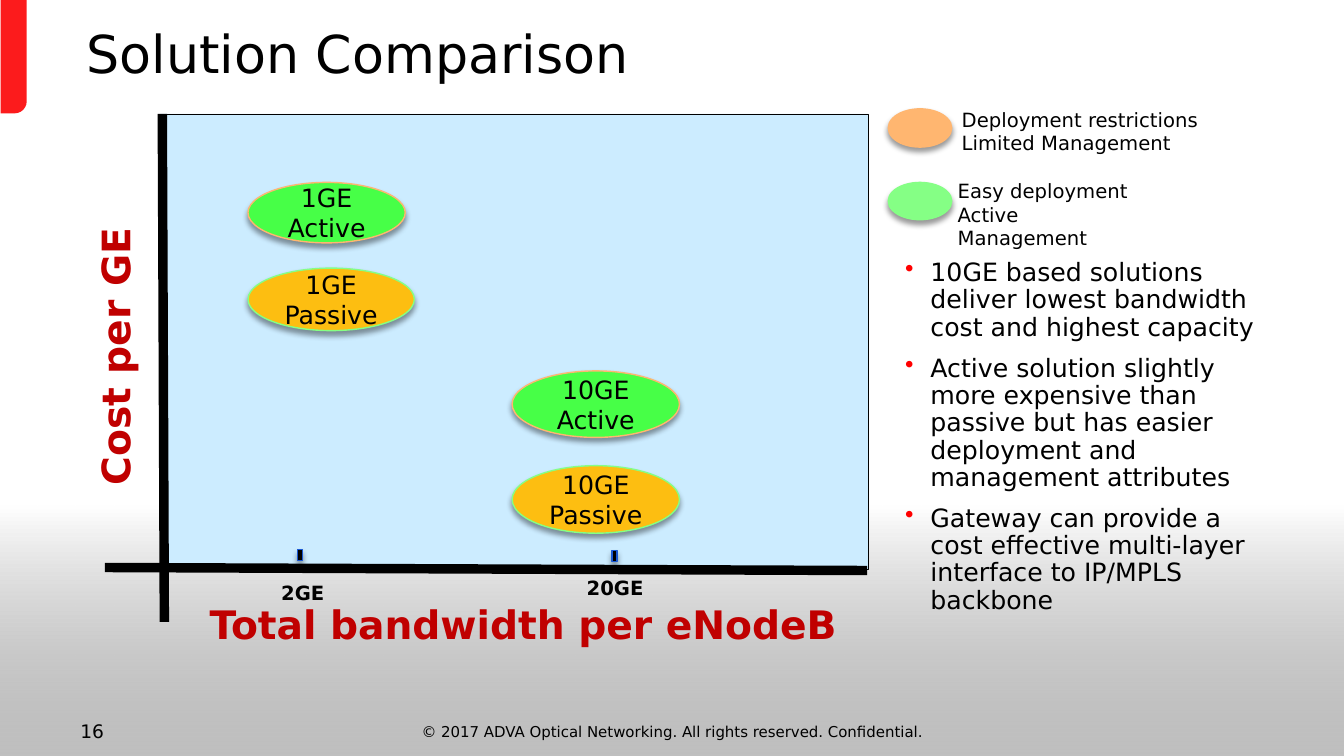
from dataclasses import dataclass

import lxml.etree
import pptx
import pptx.dml.color
import pptx.enum.shapes
import pptx.enum.text
import pptx.oxml.ns
import pptx.util
from pptx.shapes.autoshape import Shape
from pptx.slide import Slide
from pptx.text.text import TextFrame, _Paragraph

EMU_PER_PX = 9144
FONT = "DejaVu Sans"
BLACK, RED = "000000", "C00000"
GREEN, ORANGE = "47FF47", "FDBE11"
PALE_GREEN, PALE_ORANGE = "85FF85", "FFB670"
SHAPES = pptx.enum.shapes.MSO_SHAPE
ALIGN = pptx.enum.text.PP_ALIGN
ANCHOR = pptx.enum.text.MSO_ANCHOR


@dataclass
class Box:
    left: int
    top: int
    width: int
    height: int


@dataclass
class Marker:
    box: Box
    fill: str
    line: str
    lines: tuple[str, ...] = ()
    kind: SHAPES = SHAPES.OVAL


@dataclass
class Label:
    box: Box
    lines: tuple[str, ...]
    size: float
    color: str = BLACK
    bold: bool = False
    align: ALIGN = ALIGN.LEFT
    rotation: int = 0
    wrap: bool = False


@dataclass
class Axis:
    start: tuple[int, int]
    end: tuple[int, int]


MARKERS = [
    Marker(Box(246, 266, 165, 62), ORANGE, PALE_GREEN, ("1GE", "Passive")),
    Marker(Box(246, 181, 156, 60), GREEN, PALE_ORANGE, ("1GE", "Active")),
    Marker(Box(508, 462, 166, 67), ORANGE, PALE_GREEN, ("10GE", "Passive")),
    Marker(Box(508, 368, 166, 66), GREEN, PALE_ORANGE, ("10GE", "Active")),
    Marker(Box(881, 108, 63, 38), PALE_ORANGE, PALE_ORANGE),
    Marker(Box(881, 181, 63, 37), PALE_GREEN, PALE_GREEN),
    Marker(Box(295, 545, 5, 11), BLACK, "1A59D4", kind=SHAPES.RECTANGLE),
    Marker(Box(607, 546, 5, 11), BLACK, "1A59D4", kind=SHAPES.RECTANGLE),
]
LABELS = [
    Label(Box(-24, 325, 276, 57), ("Cost per GE",), 28, RED, True, rotation=270),
    Label(Box(198, 591, 650, 57), ("Total bandwidth per eNodeB",), 28, RED, True),
    Label(Box(269, 571, 64, 34), ("2GE",), 14, bold=True),
    Label(Box(572, 566, 78, 34), ("20GE",), 14, bold=True),
    Label(Box(944, 102, 256, 57), ("Deployment restrictions", "Limited Management"), 14),
    Label(Box(940, 173, 204, 57), ("Easy deployment", "Active Management"), 14, wrap=True),
    Label(Box(399, 712, 536, 28),
          ("© 2017 ADVA Optical Networking. All rights reserved. Confidential.",),
          10.7, align=ALIGN.CENTER, wrap=True),
    Label(Box(2, 709, 111, 33), ("16",), 13.3, align=ALIGN.RIGHT, wrap=True),
]
AXES = [Axis((161, 113), (163, 617)), Axis((104, 563), (860, 566))]
BULLETS = (
    "10GE based solutions deliver lowest bandwidth cost and highest capacity",
    "Active solution slightly more expensive than passive but has easier "
    "deployment and management attributes",
    "Gateway can provide a cost effective multi-layer interface to IP/MPLS backbone",
)


def px(value: int) -> pptx.util.Emu:
    return pptx.util.Emu(value * EMU_PER_PX)


def frame(box: Box) -> tuple[pptx.util.Emu, ...]:
    return px(box.left), px(box.top), px(box.width), px(box.height)


def rgb(color: str) -> pptx.dml.color.RGBColor:
    return pptx.dml.color.RGBColor.from_string(color)


def add_child(parent: lxml.etree._Element, tag: str, **attributes: str) -> lxml.etree._Element:
    return lxml.etree.SubElement(parent, pptx.oxml.ns.qn(tag), attributes)


def format_font(paragraph: _Paragraph, size: float, color: str = BLACK, bold: bool = False) -> None:
    paragraph.font.name = FONT
    paragraph.font.size = pptx.util.Pt(size)
    paragraph.font.bold = bold
    paragraph.font.color.rgb = rgb(color)


def write_lines(text_frame: TextFrame, lines: tuple[str, ...], size: float, align: ALIGN,
                color: str = BLACK, bold: bool = False) -> None:
    text_frame.text = "\n".join(lines)
    for paragraph in text_frame.paragraphs:
        paragraph.alignment = align
        format_font(paragraph, size, color, bold)


def add_panel(slide: Slide, kind: SHAPES, box: Box, fill: str | None = None,
              line: str | None = None, line_width: float = 1) -> Shape:
    shape = slide.shapes.add_shape(kind, *frame(box))
    shape.shadow.inherit = False
    if fill:
        shape.fill.solid()
        shape.fill.fore_color.rgb = rgb(fill)
    if line:
        shape.line.color.rgb = rgb(line)
        shape.line.width = pptx.util.Pt(line_width)
    else:
        shape.line.fill.background()
    return shape


def add_background(slide: Slide) -> None:
    shade = add_panel(slide, SHAPES.RECTANGLE, Box(0, 502, 1333, 248))
    shade.fill.gradient()
    shade.fill.gradient_angle = 90
    for stop, color, position in zip(shade.fill.gradient_stops, ("808080", "FFFFFF"), (0, 1)):
        stop.color.rgb = rgb(color)
        stop.position = position
    add_child(shade._element.xpath(".//a:gs[1]/a:srgbClr")[0], "a:alpha", val="50000")
    tab = add_panel(slide, SHAPES.ROUND_1_RECTANGLE, Box(-43, 43, 113, 26), "FC1B1C")
    tab.rotation = 90
    tab.adjustments[0] = 0.46


def add_marker(slide: Slide, marker: Marker) -> None:
    shape = add_panel(slide, marker.kind, marker.box, marker.fill, marker.line)
    effects = shape._element.spPr.find(pptx.oxml.ns.qn("a:effectLst"))
    shadow = add_child(effects, "a:outerShdw", blurRad="50800", dist="38100",
                       dir="5400000", rotWithShape="0")
    add_child(add_child(shadow, "a:srgbClr", val=BLACK), "a:alpha", val="40000")
    if marker.lines:
        text_frame = shape.text_frame
        text_frame.margin_left = text_frame.margin_right = px(7)
        text_frame.margin_top = text_frame.margin_bottom = px(4)
        text_frame.vertical_anchor = ANCHOR.MIDDLE
        write_lines(text_frame, marker.lines, 18, ALIGN.CENTER)


def add_label(slide: Slide, label: Label) -> None:
    shape = slide.shapes.add_textbox(*frame(label.box))
    shape.rotation = label.rotation
    shape.text_frame.word_wrap = label.wrap
    write_lines(shape.text_frame, label.lines, label.size, label.align, label.color, label.bold)


def add_axis(slide: Slide, axis: Axis) -> None:
    connector = slide.shapes.add_connector(
        pptx.enum.shapes.MSO_CONNECTOR.STRAIGHT, *map(px, axis.start + axis.end))
    connector.line.color.rgb = rgb(BLACK)
    connector.line.width = pptx.util.Pt(6.75)
    add_child(connector._element.spPr, "a:effectLst")


def add_bullets(slide: Slide) -> None:
    text_frame = slide.shapes.add_textbox(*frame(Box(888, 253, 372, 447))).text_frame
    text_frame.word_wrap = True
    text_frame.text = "\n".join(BULLETS)
    for index, paragraph in enumerate(text_frame.paragraphs):
        properties = paragraph._p.get_or_add_pPr()
        properties.set("marL", str(px(25)))
        properties.set("indent", str(px(-25)))
        add_child(add_child(properties, "a:buClr"), "a:srgbClr", val="FF0000")
        add_child(properties, "a:buChar", char="•")
        paragraph.line_spacing = 0.9
        if index:
            paragraph.space_before = pptx.util.Pt(10)
        format_font(paragraph, 18)


def set_title(slide: Slide) -> None:
    title = slide.shapes.title
    title.left, title.top, title.width, title.height = frame(Box(76, 0, 1190, 113))
    title.text_frame.auto_size = pptx.enum.text.MSO_AUTO_SIZE.NONE
    title.text_frame.vertical_anchor = ANCHOR.MIDDLE
    write_lines(title.text_frame, ("Solution Comparison",), 37.3, ALIGN.LEFT)
    title.text_frame.paragraphs[0].line_spacing = 0.9


def main() -> None:
    presentation = pptx.Presentation()
    presentation.slide_width, presentation.slide_height = px(1333), px(750)
    slide = presentation.slides.add_slide(presentation.slide_layouts[5])
    set_title(slide)
    add_background(slide)
    add_panel(slide, SHAPES.RECTANGLE, Box(159, 113, 702, 452), "CCECFF", BLACK, 0.5)
    add_bullets(slide)
    for axis in AXES:
        add_axis(slide, axis)
    for marker in MARKERS:
        add_marker(slide, marker)
    for label in LABELS:
        add_label(slide, label)
    presentation.save("out.pptx")


if __name__ == "__main__":
    main()
